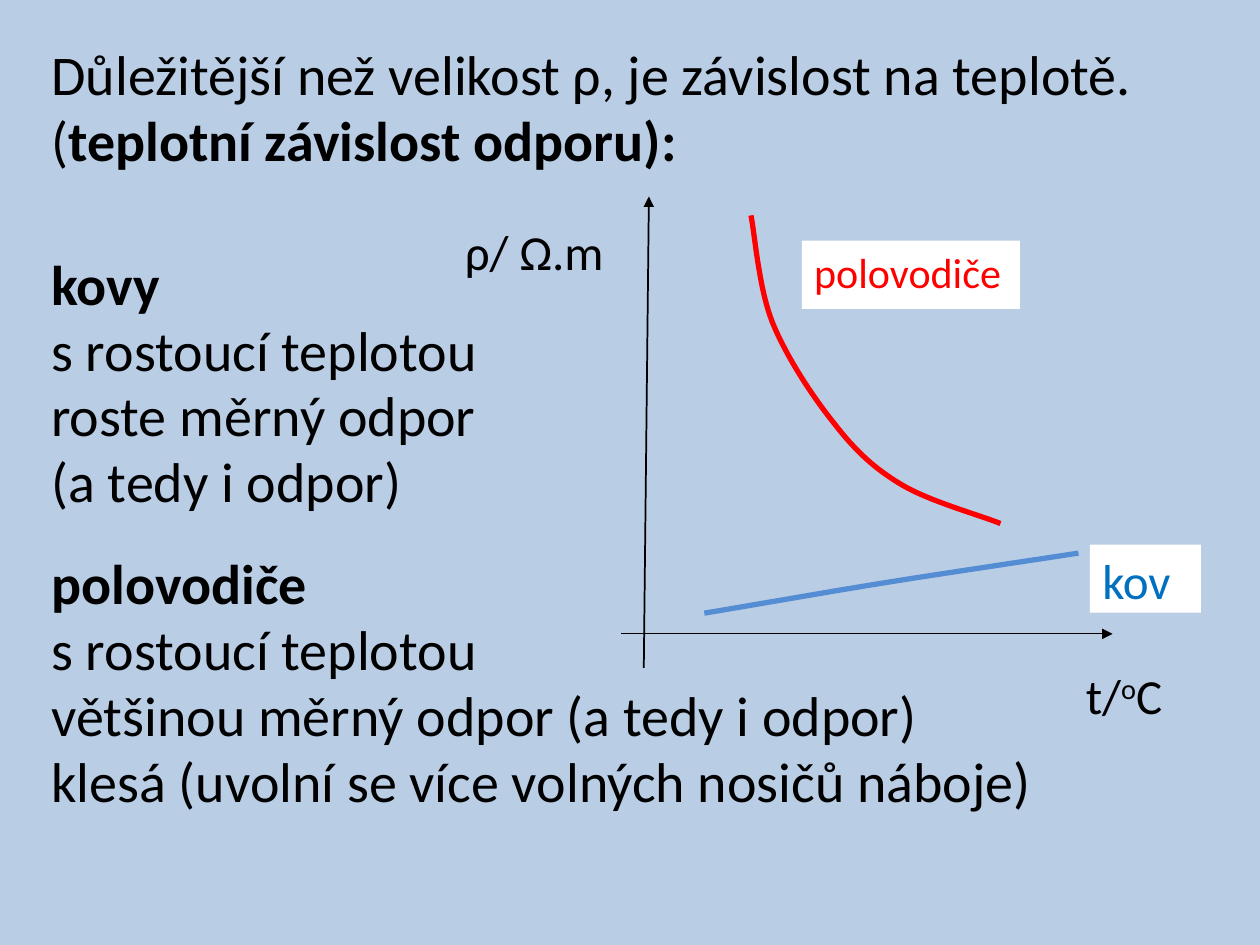
from dataclasses import dataclass

from lxml import etree
from pptx import Presentation
from pptx.dml.color import RGBColor
from pptx.enum import shapes, text
from pptx.oxml import ns
from pptx.util import Pt


@dataclass(frozen=True)
class Theme:
    font: str = "Calibri"
    background: str = "B9CDE5"
    ink: str = "000000"
    semiconductor: str = "FF0000"
    metal_curve: str = "548DD4"
    metal_label: str = "0070C0"
    label_fill: str = "FFFFFF"
    body: int = 32
    label: int = 28
    small_label: int = 24
    curve_width: float = 3


def rgb(value):
    return RGBColor.from_string(value)


def bezier(start, segments, steps=16):
    """Points along a chain of cubic Bezier segments."""
    points = [start]
    for a, b, c in segments:
        p0 = points[-1]
        for i in range(1, steps + 1):
            t = i / steps
            weights = ((1 - t) ** 3, 3 * t * (1 - t) ** 2, 3 * t * t * (1 - t), t ** 3)
            points.append(tuple(
                sum(w * q[axis] for w, q in zip(weights, (p0, a, b, c)))
                for axis in (0, 1)))
    return points


class SlideBuilder:
    def __init__(self, slide, theme):
        self.s, self.theme = slide, theme
        fill = slide.background.fill
        fill.solid()
        fill.fore_color.rgb = rgb(theme.background)

    def add_text(self, p, content, size, color, **formats):
        """Add a run for each line of content, with line breaks between."""
        for i, line in enumerate(content.split("\n")):
            if i:
                p.add_line_break()
            if not line:
                continue
            r = p.add_run()
            r.text = line
            values = {"name": self.theme.font, "size": Pt(size), **formats}
            for name, value in values.items():
                setattr(r.font, name, value)
            r.font.color.rgb = rgb(color)
        return p

    def text_box(self, x, y, w, h):
        sp = self.s.shapes.add_textbox(Pt(x), Pt(y), Pt(w), Pt(h))
        sp.text_frame.word_wrap = True
        return sp.text_frame

    def body(self, box, paragraphs):
        tf = self.text_box(*box)
        for i, (space_before, runs) in enumerate(paragraphs):
            p = tf.paragraphs[0] if i == 0 else tf.add_paragraph()
            p.space_before, p.line_spacing = Pt(space_before), 0.98
            for content, bold in runs:
                self.add_text(p, content, self.theme.body, self.theme.ink, bold=bold)

    def axis_label(self, box, content):
        p = self.text_box(*box).paragraphs[0]
        return self.add_text(p, content, self.theme.label, self.theme.ink)

    def curve_label(self, box, content, size, color):
        sp = self.s.shapes.add_shape(shapes.MSO_SHAPE.RECTANGLE, *map(Pt, box))
        sp.shadow.inherit = False
        sp.fill.solid()
        sp.fill.fore_color.rgb = rgb(self.theme.label_fill)
        sp.line.fill.background()
        tf = sp.text_frame
        tf.word_wrap, tf.vertical_anchor = True, text.MSO_ANCHOR.TOP
        p = self.add_text(tf.paragraphs[0], content, size, color)
        p.alignment = text.PP_ALIGN.LEFT

    def axis(self, start, end, width):
        """Draw a line with an arrowhead at its end."""
        sp = self.s.shapes.add_connector(
            shapes.MSO_CONNECTOR.STRAIGHT, *map(Pt, (*start, *end)))
        sp.line.color.rgb = rgb(self.theme.ink)
        sp.line.width = Pt(width)
        etree.SubElement(sp.get_or_add_ln(), ns.qn("a:tailEnd"), type="triangle")
        etree.SubElement(sp._element.spPr, ns.qn("a:effectLst"))

    def curve(self, points, color):
        points = [(Pt(x), Pt(y)) for x, y in points]
        builder = self.s.shapes.build_freeform(*points[0])
        builder.add_line_segments(points[1:], close=False)
        sp = builder.convert_to_shape()
        sp.shadow.inherit = False
        sp.fill.background()
        sp.line.color.rgb = rgb(color)
        sp.line.width = Pt(self.theme.curve_width)


def main():
    prs = Presentation()
    prs.slide_width, prs.slide_height = Pt(720), Pt(540)
    theme = Theme()
    slide = SlideBuilder(prs.slides.add_slide(prs.slide_layouts[6]), theme)

    slide.body((22.3, 20.9, 686.9, 485.3), [
        (0, [("Důležitější než velikost ρ, je závislost na teplotě. (", False),
             ("teplotní závislost odporu):", True)]),
        (44.6, [("kovy", True),
                ("\ns rostoucí teplotou\nroste měrný odpor\n(a tedy i odpor)", False)]),
        (20.6, [("polovodiče", True),
                ("\ns rostoucí teplotou\nvětšinou měrný odpor (a tedy i odpor)"
                 "\nklesá (uvolní se více volných nosičů náboje)", False)]),
    ])

    slide.axis((367.9, 381.6), (370.8, 112.3), 1)
    slide.axis((355, 362.2), (635.8, 362.2), 0.75)

    slide.curve(bezier((429.1, 123.1), [
        ((431.3, 133.2), (433.4, 164.2), (441.4, 184.3)),
        ((449.3, 203.8), (464.4, 226.8), (476.6, 241.9)),
        ((488.9, 257.8), (499.7, 267.8), (515.5, 277.2)),
        ((531.4, 286.6), (560.2, 294.5), (571.7, 299.2)),
    ]), theme.semiconductor)
    slide.curve(bezier((402.5, 350.4), [
        ((419, 347.8), (468, 339.1), (503.3, 333.4)),
        ((539.3, 327.6), (593.3, 319.7), (616.3, 316.1)),
    ]), theme.metal_curve)

    slide.curve_label((458.2, 137.5, 124.6, 39), "polovodiče",
                      theme.small_label, theme.semiconductor)
    slide.curve_label((622.8, 311.2, 63.4, 39), "kov", theme.label, theme.metal_label)

    slide.axis_label((258.5, 123.1, 101.5, 46.1), "ρ/ Ω.m")
    p = slide.axis_label((613.4, 376.6, 78.5, 54), "t/")
    slide.add_text(p, "o", theme.label, theme.ink)
    p.runs[-1].font._element.set("baseline", "30000")
    slide.add_text(p, "C", theme.label, theme.ink)

    prs.save("out.pptx")


if __name__ == "__main__":
    main()
